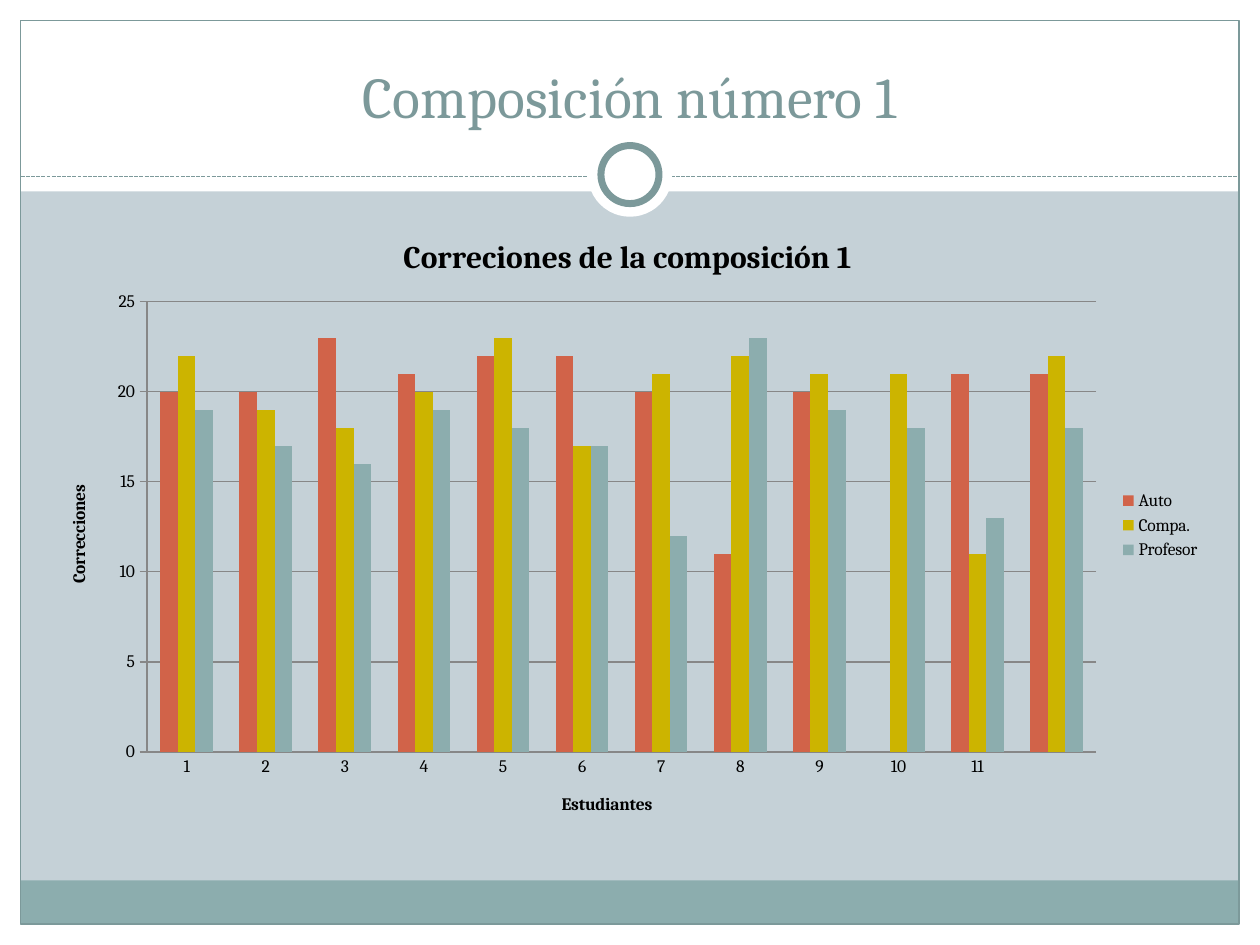
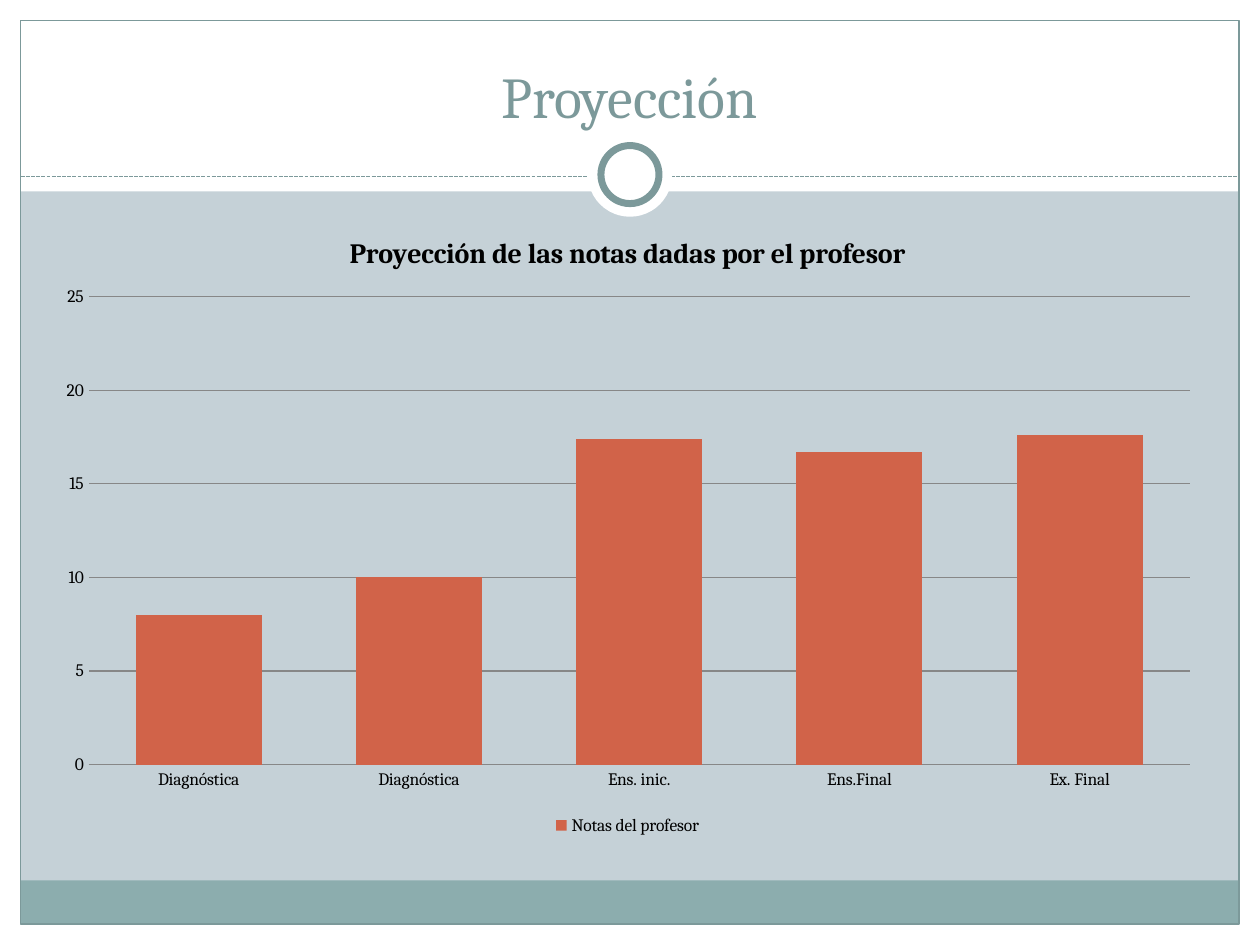
"""Builds two slides of column charts about the marks of student compositions."""
from lxml import etree
from pptx import Presentation
from pptx.chart.data import CategoryChartData
from pptx.dml.color import RGBColor
from pptx.enum.chart import XL_CHART_TYPE, XL_LEGEND_POSITION, XL_TICK_MARK
from pptx.enum.dml import MSO_LINE
from pptx.enum.shapes import MSO_CONNECTOR, MSO_SHAPE
from pptx.enum.text import MSO_ANCHOR, PP_ALIGN
from pptx.oxml.ns import qn
from pptx.util import Cm, Pt

COLUMNS = XL_CHART_TYPE.COLUMN_CLUSTERED
RIGHT, BOTTOM = XL_LEGEND_POSITION.RIGHT, XL_LEGEND_POSITION.BOTTOM
NO_TICK, CROSS_TICK = XL_TICK_MARK.NONE, XL_TICK_MARK.CROSS
RECTANGLE, OVAL = MSO_SHAPE.RECTANGLE, MSO_SHAPE.OVAL
STRAIGHT, DASHED = MSO_CONNECTOR.STRAIGHT, MSO_LINE.SQUARE_DOT
CENTER, ANCHOR_BOTTOM = PP_ALIGN.CENTER, MSO_ANCHOR.BOTTOM

FONT = "Cambria"
WHITE = RGBColor(0xFF, 0xFF, 0xFF)
BLACK = RGBColor(0x00, 0x00, 0x00)
MIST = RGBColor(0xC5, 0xD1, 0xD7)
TEAL = RGBColor(0x8C, 0xAD, 0xAE)
DARK_TEAL = RGBColor(0x7C, 0x99, 0x9A)
GRAY = RGBColor(0x87, 0x87, 0x87)
RED = RGBColor(0xD1, 0x63, 0x49)
YELLOW = RGBColor(0xCC, 0xB4, 0x00)

WIDTH, HEIGHT = 25.4, 19.05
MARGIN = 0.42
INNER = WIDTH - 2 * MARGIN
HEADER = 3.86
RULE_Y = 3.56
RING_Y = 3.52
TITLE_ONLY = 5


def format_font(font, size=10, color=BLACK, bold=False):
    font.name, font.size, font.bold = FONT, Pt(size), bold
    font.color.rgb = color


def write(frame, text, align=CENTER, **style):
    frame.text = text
    para = frame.paragraphs[0]
    para.alignment = align
    format_font(para.runs[0].font, **style)


class Deck:
    def __init__(self):
        self.deck = Presentation()
        self.deck.slide_width, self.deck.slide_height = Cm(WIDTH), Cm(HEIGHT)
        self.layout = self.deck.slide_layouts[TITLE_ONLY]
        background = self.layout.background.fill
        background.solid()
        background.fore_color.rgb = MIST
        title = self.layout.placeholders[0]
        title.left, title.top = Cm(0.84), Cm(0.64)
        title.width, title.height = Cm(23.7), Cm(2.1)
        self.page = None

    def add_page(self, title):
        self.page = self.deck.slides.add_slide(self.layout)
        frame = self.page.shapes.title.text_frame
        frame.vertical_anchor = ANCHOR_BOTTOM
        write(frame, title, size=33, color=DARK_TEAL)

    def add_shape(self, kind, left, top, width, height, fill=None, line=None):
        shape = self.page.shapes.add_shape(
            kind, Cm(left), Cm(top), Cm(width), Cm(height))
        shape.shadow.inherit = False
        if fill is None:
            shape.fill.background()
        else:
            shape.fill.solid()
            shape.fill.fore_color.rgb = fill
        if line is None:
            shape.line.fill.background()
        else:
            shape.line.color.rgb, shape.line.width = DARK_TEAL, Pt(line)

    def add_circle(self, diameter, **style):
        self.add_shape(OVAL, (WIDTH - diameter) / 2, RING_Y - diameter / 2,
                       diameter, diameter, fill=WHITE, **style)

    def add_rule(self):
        rule = self.page.shapes.add_connector(
            STRAIGHT, Cm(MARGIN), Cm(RULE_Y), Cm(WIDTH - MARGIN), Cm(RULE_Y))
        rule.line.color.rgb, rule.line.width = DARK_TEAL, Pt(0.75)
        rule.line.dash_style = DASHED
        properties = rule.element.find(qn("p:spPr"))
        etree.SubElement(properties, qn("a:effectLst"))

    def add_frame(self):
        borders = [(0, HEIGHT - MARGIN, WIDTH, MARGIN), (0, 0, WIDTH, HEADER),
                   (0, 0, MARGIN, HEIGHT), (WIDTH - MARGIN, 0, MARGIN, HEIGHT)]
        for border in borders:
            self.add_shape(RECTANGLE, *border, fill=WHITE)
        self.add_shape(RECTANGLE, MARGIN, 17.75, INNER, 0.87, fill=TEAL)
        self.add_shape(RECTANGLE, MARGIN, MARGIN, INNER, HEIGHT - 2 * MARGIN,
                       line=0.75)
        self.add_rule()
        self.add_circle(1.7)
        self.add_circle(1.17, line=4)
        self.move_to_layout()

    def move_to_layout(self):
        for shape in list(self.page.shapes):
            if not shape.is_placeholder:
                self.layout.shapes.element.append(shape.element)

    def add_chart(self, title, categories, series, plot_box, legend,
                  title_size=18, gap=150, overlap=0):
        data = CategoryChartData()
        data.categories = categories
        for name, values, _ in series:
            data.add_series(name, values)
        chart = self.page.shapes.add_chart(
            COLUMNS, Cm(0.84), Cm(4.24), Cm(23.62), Cm(12.7), data).chart
        format_font(chart.font)
        write(chart.chart_title.text_frame, title, size=title_size, bold=True)
        chart.has_legend = True
        chart.legend.position = legend
        chart.legend.include_in_layout = False
        format_font(chart.legend.font)
        plot = chart.plots[0]
        plot.gap_width, plot.overlap = gap, overlap
        plot.vary_by_categories = False
        for bars, (_, _, color) in zip(plot.series, series):
            bars.invert_if_negative = False
            bars.format.fill.solid()
            bars.format.fill.fore_color.rgb = color
        self.place_plot(chart, plot_box)
        self.format_axes(chart)
        return chart

    def place_plot(self, chart, plot_box):
        area = chart.element.find(".//" + qn("c:plotArea"))
        for old in area.findall(qn("c:layout")):
            area.remove(old)
        layout = etree.Element(qn("c:layout"))
        area.insert(0, layout)
        manual = etree.SubElement(layout, qn("c:manualLayout"))
        settings = [("layoutTarget", "inner"), ("xMode", "edge"),
                    ("yMode", "edge"), *zip("xywh", plot_box)]
        for tag, value in settings:
            etree.SubElement(manual, qn("c:" + tag)).set("val", str(value))

    def format_axes(self, chart):
        for axis in (chart.category_axis, chart.value_axis):
            axis.major_tick_mark = axis.minor_tick_mark = NO_TICK
            axis.format.line.color.rgb = GRAY
            format_font(axis.tick_labels.font)
        values = chart.value_axis
        values.minimum_scale, values.maximum_scale = 0, 25
        values.major_unit = 5
        values.has_major_gridlines = True
        values.major_gridlines.format.line.color.rgb = GRAY

    def save(self):
        self.deck.save("out.pptx")


def add_composition(deck):
    deck.add_page("Composición número 1")
    deck.add_frame()
    students = [str(number) for number in range(1, 12)] + [""]
    series = [
        ("Auto", [20, 20, 23, 21, 22, 22, 20, 11, 20, None, 21, 21], RED),
        ("Compa.", [22, 19, 18, 20, 23, 17, 21, 22, 21, 21, 11, 22], YELLOW),
        ("Profesor", [19, 17, 16, 19, 18, 17, 12, 23, 19, 18, 13, 18], TEAL),
    ]
    chart = deck.add_chart("Correciones de la composición 1", students, series,
                           (0.09, 0.145, 0.81, 0.715), RIGHT)
    chart.value_axis.major_tick_mark = CROSS_TICK
    for axis, text in ((chart.category_axis, "Estudiantes"),
                       (chart.value_axis, "Correcciones")):
        write(axis.axis_title.text_frame, text, bold=True)


def add_projection(deck):
    deck.add_page("Proyección")
    stages = ["Diagnóstica", "Diagnóstica", "Ens. inic.", "Ens.Final", "Ex. Final"]
    series = [("Notas del profesor", [8, 10, 17.4, 16.7, 17.6], RED)]
    chart = deck.add_chart("Proyección de las notas dadas por el profesor",
                           stages, series, (0.04, 0.137, 0.94, 0.743), BOTTOM,
                           title_size=16, gap=75, overlap=-25)
    chart.value_axis.format.line.fill.background()


def main():
    deck = Deck()
    add_composition(deck)
    add_projection(deck)
    deck.save()


if __name__ == "__main__":
    main()
